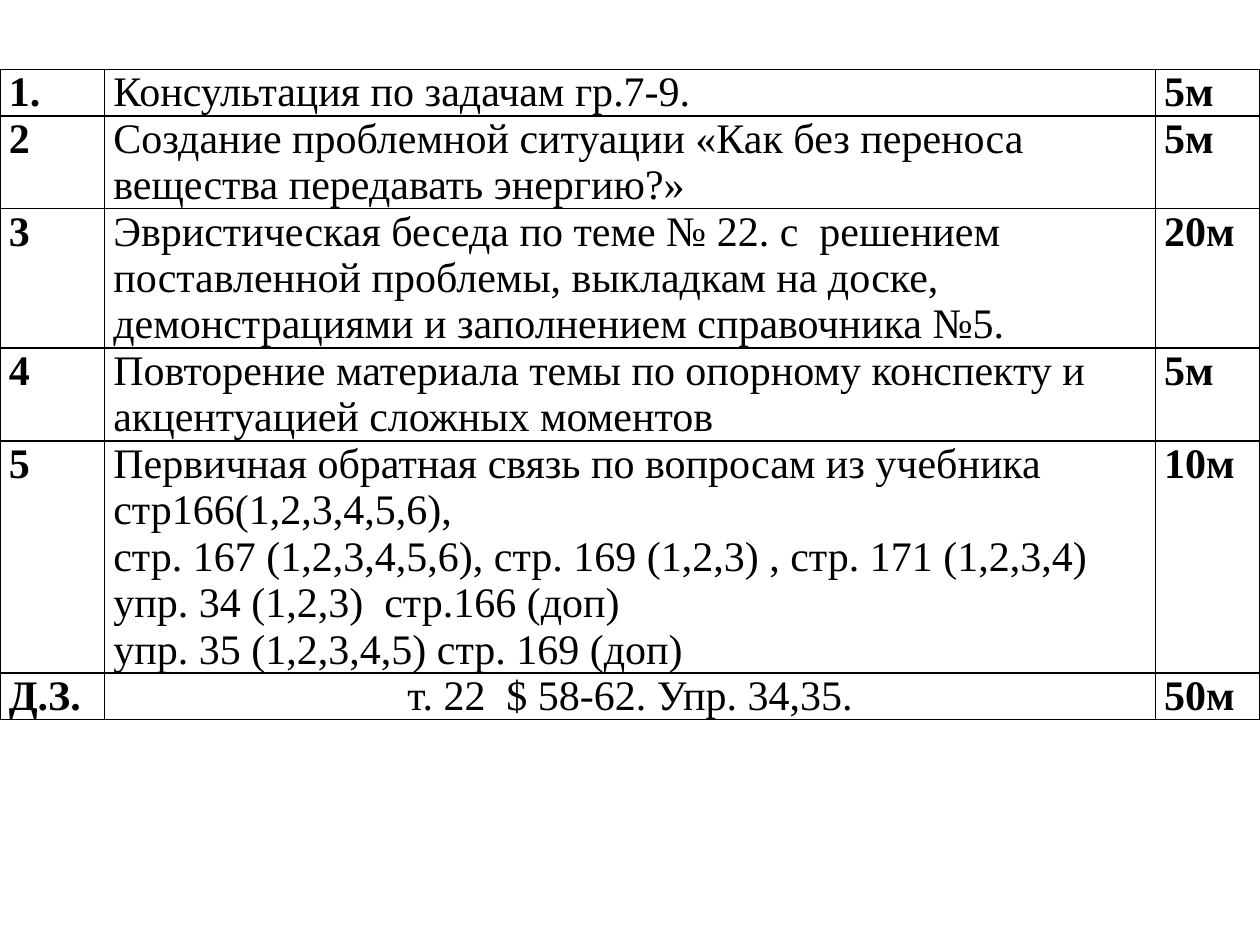
from lxml import etree
from pptx import Presentation
from pptx.dml.color import RGBColor
from pptx.enum.text import PP_ALIGN
from pptx.oxml.ns import qn
from pptx.util import Inches, Pt

LEFT, CENTER = PP_ALIGN.LEFT, PP_ALIGN.CENTER

# Content: number, paragraphs, minutes, lines of text, alignment
STEPS = [
    ("1.", ["Консультация по задачам гр.7-9."], "5м", 1, LEFT),
    ("2", ["Создание проблемной ситуации «Как без переноса вещества "
           "передавать энергию?»"], "5м", 2, LEFT),
    ("3", ["Эвристическая беседа по теме № 22. с  решением поставленной "
           "проблемы, выкладкам на доске, демонстрациями и заполнением "
           "справочника №5."], "20м", 3, LEFT),
    ("4", ["Повторение материала темы по опорному конспекту и "
           "акцентуацией сложных моментов"], "5м", 2, LEFT),
    ("5", ["Первичная обратная связь по вопросам из учебника "
           "стр166(1,2,3,4,5,6),",
           "стр. 167 (1,2,3,4,5,6), стр. 169 (1,2,3) , стр. 171 (1,2,3,4)",
           "упр. 34 (1,2,3)  стр.166 (доп)",
           "упр. 35 (1,2,3,4,5) стр. 169 (доп)"], "10м", 5, LEFT),
    ("Д.З.", ["т. 22  $ 58-62. Упр. 34,35."], "50м", 1, CENTER),
]

# Format
COLORS = {"ink": "000000"}
WIDE, HIGH = 10, 7.5
TOP, LINE, SIDE = 0.55, 0.36, 0.83
COLS = [SIDE, WIDE - 2 * SIDE, SIDE]
FONT = {"name": "Times New Roman", "size": Pt(24)}
CELL = {"margin_left": Inches(0.07), "margin_right": Inches(0.07),
        "margin_top": 0, "margin_bottom": 0}


def frame(cell):
    """Draw a thin line on each side of a cell."""
    props = cell._tc.get_or_add_tcPr()
    for tag in ("a:lnL", "a:lnR", "a:lnT", "a:lnB"):
        line = etree.SubElement(props, qn(tag), w=str(Pt(1)))
        fill = etree.SubElement(line, qn("a:solidFill"))
        etree.SubElement(fill, qn("a:srgbClr"), val=COLORS["ink"])


def write(cell, texts, bold, align):
    for key, value in CELL.items():
        setattr(cell, key, value)
    frame(cell)
    cell.fill.background()
    cell.text = "\n".join(texts)
    for para in cell.text_frame.paragraphs:
        para.alignment = align
        for run in para.runs:
            for key, value in {**FONT, "bold": bold}.items():
                setattr(run.font, key, value)
            run.font.color.rgb = RGBColor.from_string(COLORS["ink"])


def main():
    deck = Presentation()
    deck.slide_width, deck.slide_height = Inches(WIDE), Inches(HIGH)
    slide = deck.slides.add_slide(deck.slide_layouts[6])

    # Lesson plan table: row height follows its line count
    total = sum(step[3] for step in STEPS) * LINE
    table = slide.shapes.add_table(
        len(STEPS), len(COLS), 0, Inches(TOP), Inches(WIDE), Inches(total)
    ).table
    table.first_row = table.horz_banding = False
    for col, width in zip(table.columns, COLS):
        col.width = Inches(width)
    for row, (num, texts, time, lines, align) in zip(table.rows, STEPS):
        row.height = Inches(lines * LINE)
        parts = [([num], True, LEFT), (texts, False, align),
                 ([time], True, LEFT)]
        for cell, part in zip(row.cells, parts):
            write(cell, *part)

    deck.save("out.pptx")


if __name__ == "__main__":
    main()
